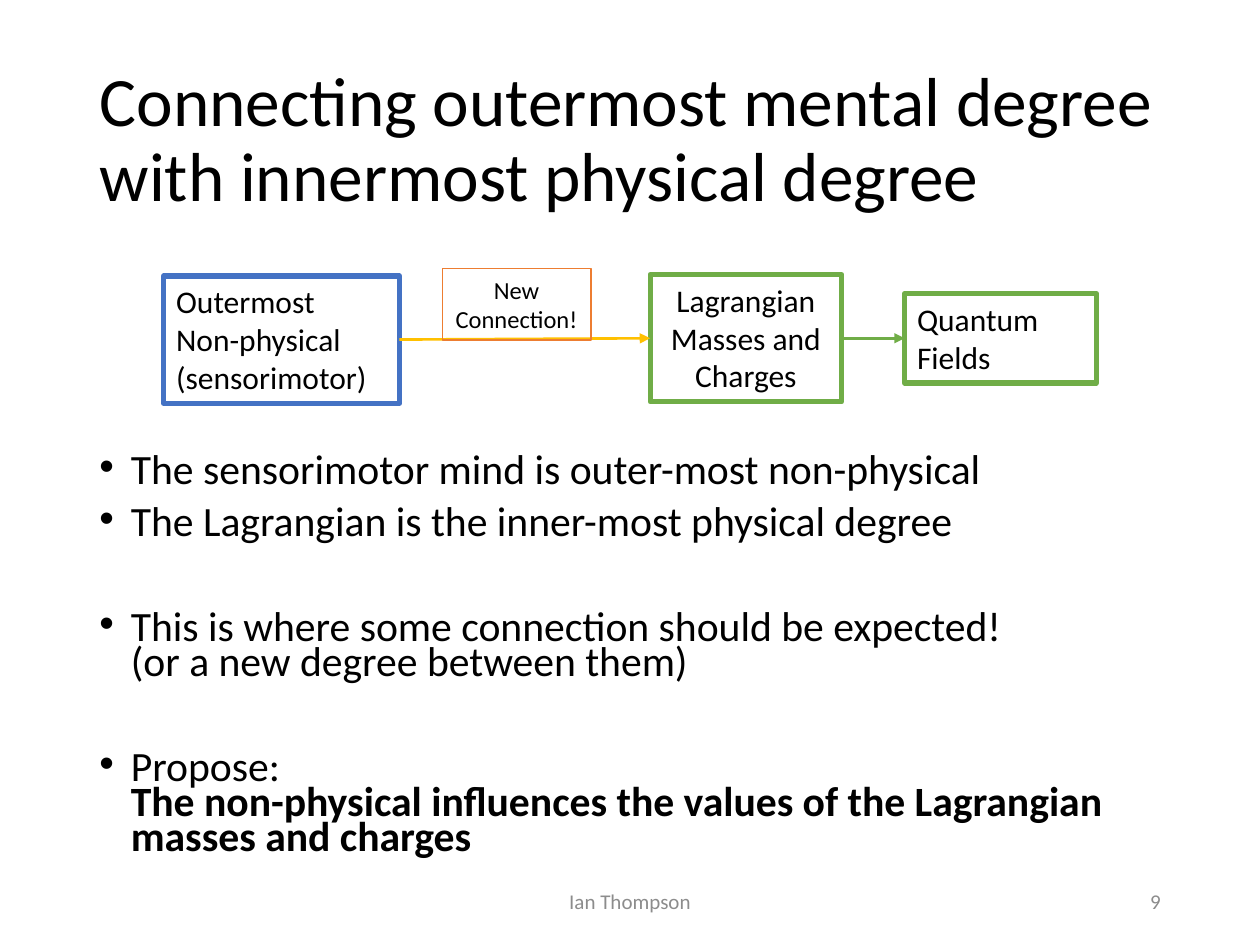
from dataclasses import dataclass

from lxml.etree import SubElement
from pptx import Presentation
from pptx.dml.color import RGBColor
from pptx.enum.shapes import MSO_CONNECTOR as Connector, MSO_SHAPE as Shape
from pptx.enum.text import MSO_ANCHOR as Anchor, MSO_AUTO_SIZE as AutoSize, PP_ALIGN as Align
from pptx.oxml.ns import qn
from pptx.util import Inches, Pt


@dataclass(frozen=True)
class Theme:
    font: str = "Calibri"
    text: str = "000000"
    muted: str = "8C8C8C"
    mental: str = "4472C4"
    physical: str = "70AD47"
    link: str = "FFC000"
    callout: str = "ED7D31"
    title_size: float = 39.6
    body_size: float = 23.8
    box_size: float = 18
    callout_size: float = 14
    footer_size: float = 12


class SlideBuilder:
    def __init__(self, slide, theme):
        self.slide = slide
        self.theme = theme

    def style(self, paragraph, size, color, align=Align.LEFT):
        paragraph.alignment = align
        for run in paragraph.runs:
            run.font.name = self.theme.font
            run.font.size = Pt(size)
            run.font.color.rgb = RGBColor.from_string(color)

    def title(self, text, *bounds):
        heading = self.slide.shapes.title
        heading.left, heading.top, heading.width, heading.height = map(Inches, bounds)
        frame = heading.text_frame
        frame.text = text
        frame.auto_size = AutoSize.NONE
        frame.vertical_anchor = Anchor.MIDDLE
        frame.paragraphs[0].line_spacing = 0.9
        self.style(frame.paragraphs[0], self.theme.title_size, self.theme.text)

    def bullets(self, items, *bounds):
        frame = self.slide.shapes.add_textbox(*map(Inches, bounds)).text_frame
        frame.word_wrap = True
        frame.text = "\n".join(text for text, _ in items)
        for paragraph, (_, gap) in zip(frame.paragraphs, items):
            properties = paragraph._p.get_or_add_pPr()
            properties.set("marL", str(Inches(0.25)))
            properties.set("indent", str(-Inches(0.25)))
            SubElement(properties, qn("a:buFont"), typeface="Arial")
            SubElement(properties, qn("a:buChar"), char="•")
            paragraph.line_spacing = 0.7
            paragraph.space_before = Pt(gap)
            self.style(paragraph, self.theme.body_size, self.theme.text)
        return frame.paragraphs

    def footer(self, text, align, *bounds):
        frame = self.slide.shapes.add_textbox(*map(Inches, bounds)).text_frame
        frame.word_wrap = True
        frame.vertical_anchor = Anchor.MIDDLE
        frame.text = text
        self.style(frame.paragraphs[0], self.theme.footer_size, self.theme.muted, align)

    def box(self, text, color, *bounds, align=Align.LEFT, size=None, line=3, wrap=True):
        rectangle = self.slide.shapes.add_shape(Shape.RECTANGLE, *map(Inches, bounds))
        rectangle.shadow.inherit = False
        rectangle.fill.background()
        rectangle.line.color.rgb = RGBColor.from_string(color)
        rectangle.line.width = Pt(line)
        frame = rectangle.text_frame
        frame.word_wrap = wrap
        frame.auto_size = AutoSize.SHAPE_TO_FIT_TEXT
        frame.vertical_anchor = Anchor.TOP
        frame.text = text
        for paragraph in frame.paragraphs:
            self.style(paragraph, size or self.theme.box_size, self.theme.text, align)
        return rectangle

    def arrow(self, source, target, color):
        connector = self.slide.shapes.add_connector(Connector.STRAIGHT, 0, 0, 0, 0)
        connector.begin_connect(source, 3)
        connector.end_connect(target, 1)
        connector.line.color.rgb = RGBColor.from_string(color)
        connector.line.width = Pt(1.5)
        SubElement(connector.line._get_or_add_ln(), qn("a:tailEnd"), type="triangle")
        SubElement(connector._element.spPr, qn("a:effectLst"))


def main():
    presentation = Presentation()
    presentation.slide_width, presentation.slide_height = Inches(10), Inches(7.5)
    theme = Theme()
    builder = SlideBuilder(presentation.slides.add_slide(presentation.slide_layouts[5]), theme)

    builder.title("Connecting outermost mental degree with innermost physical degree",
                  0.69, 0.4, 8.62, 1.45)

    close_gap, wide_gap = 10, 40
    points = builder.bullets([
        ("The sensorimotor mind is outer-most non-physical", 0),
        ("The Lagrangian is the inner-most physical degree", close_gap),
        ("This is where some connection should be expected!\v(or a new degree between them)",
         wide_gap),
        ("Propose:\vThe non-physical influences the values of the Lagrangian masses and charges",
         wide_gap),
    ], 0.69, 3.57, 8.62, 3.38)
    points[-1].runs[-1].font.bold = True

    builder.footer("Ian Thompson", Align.CENTER, 3.31, 6.95, 3.38, 0.4)
    builder.footer("9", Align.RIGHT, 7.06, 6.95, 2.25, 0.4)

    outermost = builder.box("Outermost\nNon-physical\n(sensorimotor)", theme.mental,
                            1.3, 2.19, 1.87, 1.01)
    lagrangian = builder.box("Lagrangian\nMasses and Charges", theme.physical,
                             5.16, 2.18, 1.52, 1.01, align=Align.CENTER)
    fields = builder.box("Quantum\nFields", theme.physical, 7.18, 2.33, 1.52, 0.71)
    builder.arrow(lagrangian, fields, theme.physical)
    builder.arrow(outermost, lagrangian, theme.link)
    builder.box("New\nConnection!", theme.callout, 3.51, 2.13, 1.18, 0.57,
                align=Align.CENTER, size=theme.callout_size, line=0.75, wrap=False)

    presentation.save("out.pptx")


if __name__ == "__main__":
    main()
